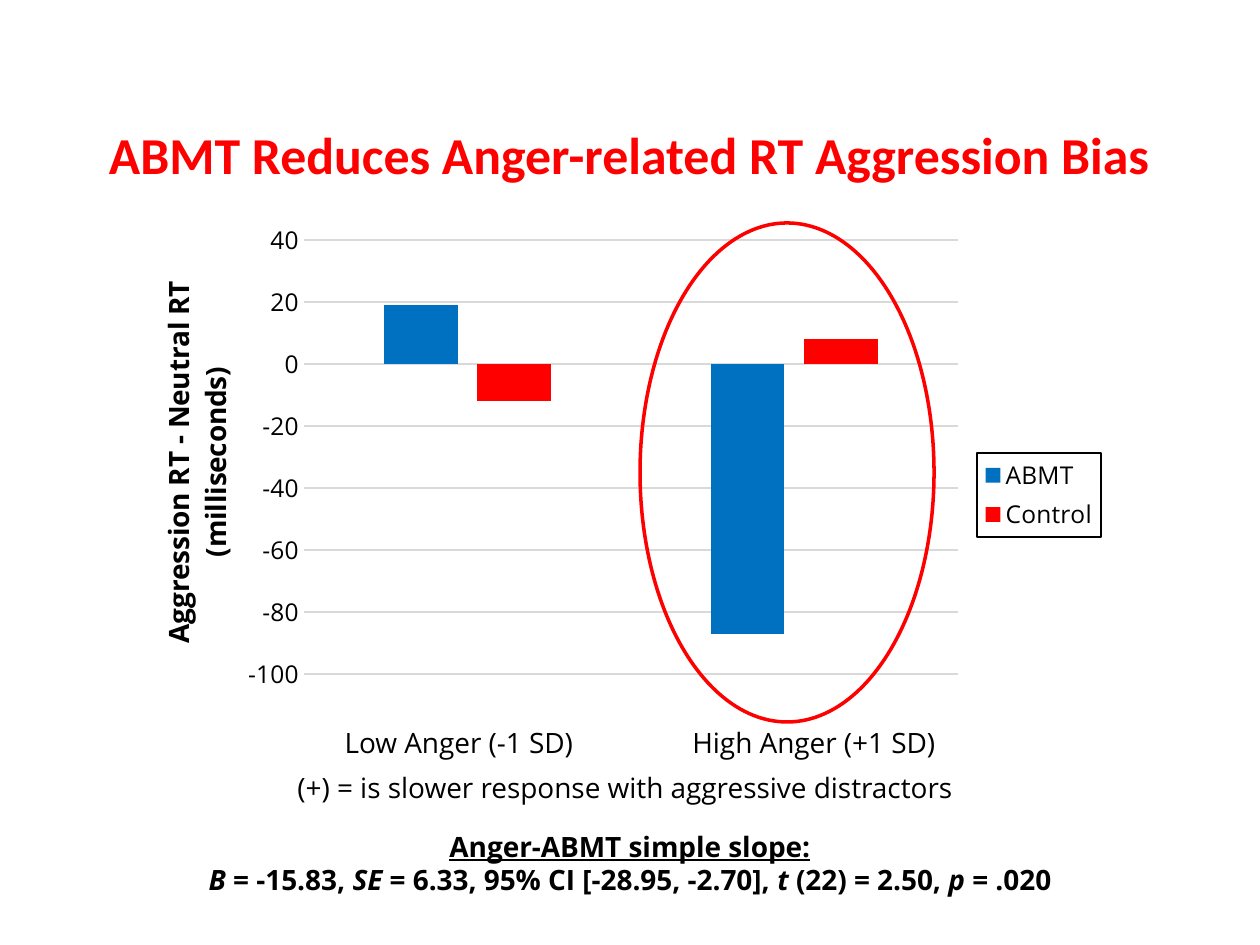
from lxml import etree
from pptx import Presentation
from pptx import util as u
from pptx.chart.data import CategoryChartData
from pptx.dml.color import RGBColor
from pptx.enum import chart as kinds, shapes, text
from pptx.oxml import parse_xml
from pptx.oxml.ns import nsdecls, qn

COLORS = {"black": "000000", "red": "FF0000", "blue": "0070C0", "grid": "D9D9D9"}
BODY, HEAD = "Open Sans", "Calibri"

TITLE = "ABMT Reduces Anger-related RT Aggression Bias"
AXIS_TITLE = "Aggression RT - Neutral RT (milliseconds)"
SERIES = [("ABMT", (19, -87), "blue"), ("Control", (-12, 8), "red")]
GROUPS = [("Low Anger (-1 SD)", 459), ("High Anger (+1 SD)", 814)]
NOTE = "(+) = is slower response with aggressive distractors"
SLOPE = [
    [("Anger-ABMT simple slope:", "u")],
    [("B", "i"), (" = -15.83, ", ""), ("SE", "i"),
     (" = 6.33, 95% CI [-28.95, -2.70], ", ""), ("t ", "i"),
     ("(22) = 2.50, ", ""), ("p", "i"), (" = .020", "")],
]
CHART = (116, 213, 995, 564)
PLOT = (304, 240, 654, 434)
LEGEND = (977, 453, 124, 84)
AXIS_TITLE_AT = (152, 276)


def px(value):
    return u.Emu(round(value * 914400 / 126))


def color(name):
    return RGBColor.from_string(COLORS[name])


def style(font, size, face=BODY, tint="black", bold=False):
    font.size, font.name, font.bold = u.Pt(size), face, bold
    font.color.rgb = color(tint)


def add_text(page, content, at, size=16, face=BODY, tint="black", bold=False,
             wrap=True, align=text.PP_ALIGN.CENTER, anchor=text.MSO_ANCHOR.TOP):
    frame = page.shapes.add_textbox(*map(px, at)).text_frame
    frame.word_wrap, frame.vertical_anchor = wrap, anchor
    lines = [[(content, "")]] if isinstance(content, str) else content
    for index, line in enumerate(lines):
        para = frame.add_paragraph() if index else frame.paragraphs[0]
        para.alignment = align
        for words, marks in line:
            span = para.add_run()
            span.text = words
            style(span.font, size, face, tint, bold)
            span.font.italic, span.font.underline = "i" in marks, "u" in marks


def place(element, index, at, inner=False):
    for old in element.findall(qn("c:layout")):
        element.remove(old)
    layout = parse_xml(f"<c:layout {nsdecls('c')}><c:manualLayout/></c:layout>")
    left, top, width, height = CHART
    values = [("xMode", "edge"), ("yMode", "edge"),
              ("x", round((at[0] - left) / width, 4)),
              ("y", round((at[1] - top) / height, 4))]
    if inner:
        values.insert(0, ("layoutTarget", "inner"))
    if len(at) == 4:
        values += [("w", round(at[2] / width, 4)), ("h", round(at[3] / height, 4))]
    for name, value in values:
        etree.SubElement(layout[0], qn(f"c:{name}")).set("val", str(value))
    element.insert(index, layout)


def add_bias_chart(page):
    data = CategoryChartData()
    data.categories = ["1", "2"]
    for name, values, _ in SERIES:
        data.add_series(name, values)
    chart = page.shapes.add_chart(
        kinds.XL_CHART_TYPE.COLUMN_CLUSTERED, *map(px, CHART), data).chart
    style(chart.font, 14)
    chart.has_title = False
    plot = chart.plots[0]
    plot.gap_width, plot.overlap, plot.vary_by_categories = 219, -27, False
    for series, (_, _, tint) in zip(plot.series, SERIES):
        series.invert_if_negative = False
        series.format.fill.solid()
        series.format.fill.fore_color.rgb = color(tint)
    chart.category_axis.visible = False

    axis = chart.value_axis
    axis.minimum_scale, axis.maximum_scale, axis.major_unit = -100, 40, 20
    axis.major_tick_mark = axis.minor_tick_mark = kinds.XL_TICK_MARK.NONE
    axis.format.line.fill.background()
    axis.major_gridlines.format.line.color.rgb = color("grid")
    axis.major_gridlines.format.line.width = u.Pt(0.75)
    style(axis.tick_labels.font, 14)
    span = axis.axis_title.text_frame.paragraphs[0].add_run()
    span.text = AXIS_TITLE
    style(span.font, 16, bold=True)

    chart.has_legend = True
    legend = chart.legend
    legend.position = kinds.XL_LEGEND_POSITION.RIGHT
    legend.include_in_layout = False
    style(legend.font, 14)
    legend._element.find(qn("c:txPr")).addprevious(parse_xml(
        f'<c:spPr {nsdecls("c", "a")}><a:ln w="9525"><a:solidFill>'
        f'<a:srgbClr val="{COLORS["black"]}"/></a:solidFill></a:ln></c:spPr>'))

    place(chart._chartSpace.chart.plotArea, 0, PLOT, inner=True)
    place(legend._element, 1, LEGEND)
    place(axis.axis_title._element, 1, AXIS_TITLE_AT)


def main():
    deck = Presentation()
    deck.slide_width, deck.slide_height = px(1260), px(945)
    page = deck.slides.add_slide(deck.slide_layouts[6])
    add_bias_chart(page)
    for label, center in GROUPS:
        add_text(page, label, (center - 140, 719, 280, 47))
    add_text(page, NOTE, (285, 764, 690, 47), wrap=False, align=text.PP_ALIGN.LEFT)
    add_text(page, SLOPE, (184, 823, 892, 81), bold=True)
    add_text(page, TITLE, (63, 95, 1134, 118), size=29.6, face=HEAD, tint="red",
             bold=True, anchor=text.MSO_ANCHOR.MIDDLE)
    ring = page.shapes.add_shape(shapes.MSO_SHAPE.OVAL, *map(px, (640, 223, 294, 499)))
    ring.shadow.inherit = False
    ring.fill.background()
    ring.line.color.rgb, ring.line.width = color("red"), u.Pt(2)
    deck.save("out.pptx")


if __name__ == "__main__":
    main()
